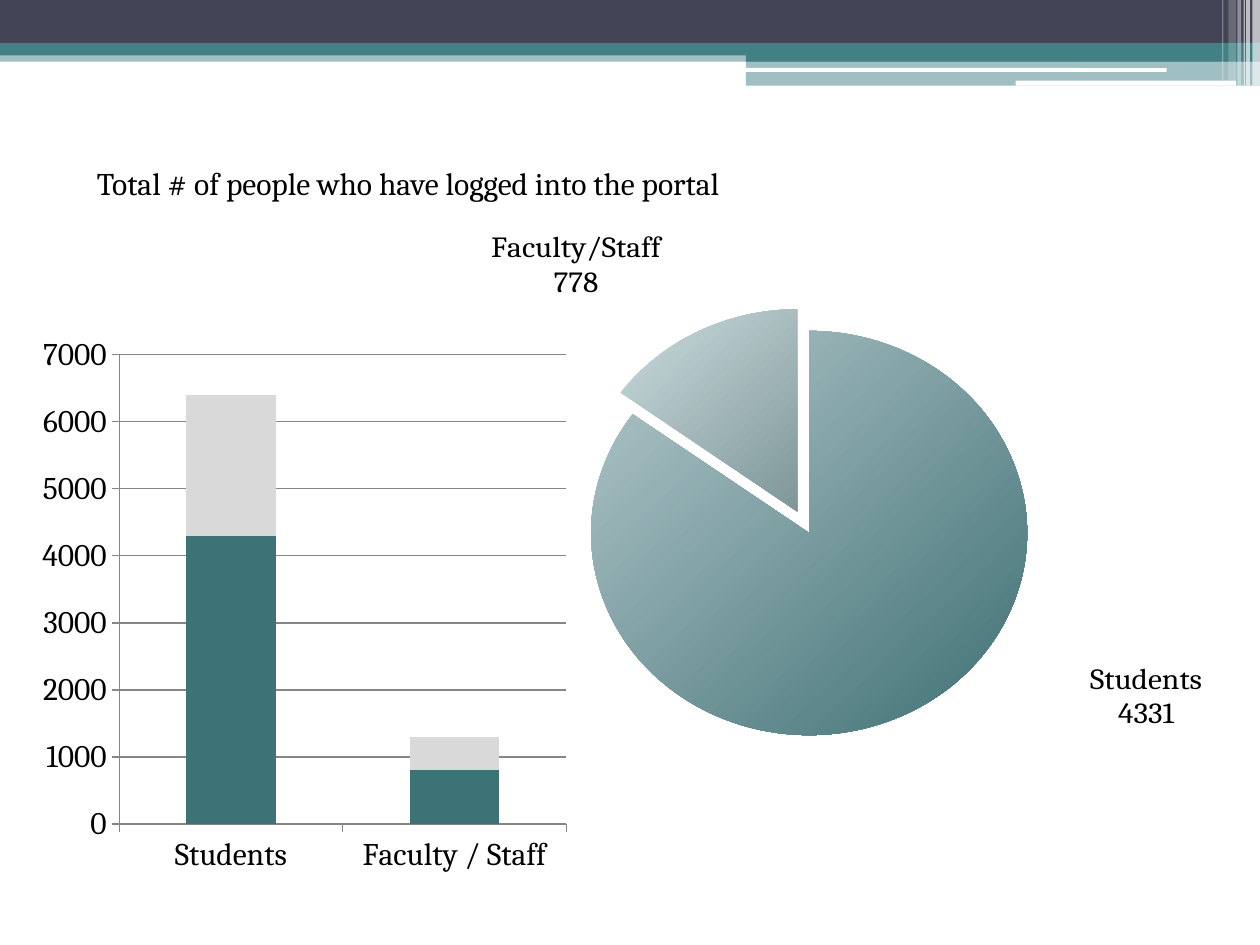
import pptx
import pptx.util
import pptx.chart.data
import pptx.dml.color
import pptx.enum.chart
import pptx.enum.shapes
import pptx.enum.text
import pptx.oxml
import pptx.oxml.ns

Inches, Pt = pptx.util.Inches, pptx.util.Pt
CHART = pptx.enum.chart
SHAPE = pptx.enum.shapes.MSO_SHAPE
NS = pptx.oxml.ns.nsdecls("c")
COLORS = {
    "text": "000000", "white": "FFFFFF", "navy": "424456", "teal": "438086",
    "bar": "3B7377", "rest": "D9D9D9", "axis": "868686",
    "student_light": "B4C8CB", "student_dark": "3F7074",
    "staff_light": "CBDBDE", "staff_dark": "7F9799",
}


def rgb(name):
    return pptx.dml.color.RGBColor.from_string(COLORS[name])


def layout_xml(target="", **values):
    """Manual chart layout; values are fractions of the chart area."""
    body = "".join(f'<c:{key} val="{val}"/>' for key, val in values.items())
    return pptx.oxml.parse_xml(
        f"<c:layout {NS}><c:manualLayout>{target}{body}</c:manualLayout></c:layout>")


class Deck:
    font = "Cambria"
    size = Pt(18)

    def __init__(self, width, height):
        self.prs = pptx.Presentation()
        self.prs.slide_width, self.prs.slide_height = Inches(width), Inches(height)
        self.slide = self.prs.slides.add_slide(self.prs.slide_layouts[6])

    def style(self, font):
        font.name, font.size = self.font, self.size
        font.color.rgb = rgb("text")

    def band(self, x, y, w, h, color, alpha=100, shape=SHAPE.RECTANGLE):
        sp = self.slide.shapes.add_shape(shape, Inches(x), Inches(y), Inches(w), Inches(h))
        sp.shadow.inherit = False
        sp.line.fill.background()
        sp.fill.solid()
        sp.fill.fore_color.rgb = rgb(color)
        if alpha < 100:
            clr = sp.element.xpath("./p:spPr/a:solidFill/a:srgbClr")[0]
            clr.append(pptx.oxml.parse_xml(
                f'<a:alpha {pptx.oxml.ns.nsdecls("a")} val="{alpha * 1000}"/>'))
        return sp

    def text(self, x, y, w, h, wording):
        tf = self.slide.shapes.add_textbox(Inches(x), Inches(y), Inches(w), Inches(h)).text_frame
        tf.word_wrap = True
        tf.auto_size = pptx.enum.text.MSO_AUTO_SIZE.SHAPE_TO_FIT_TEXT
        r = tf.paragraphs[0].add_run()
        r.text = wording
        self.style(r.font)

    def chart(self, kind, x, y, w, h, cats, series):
        data = pptx.chart.data.CategoryChartData()
        data.categories = cats
        for name, vals in series:
            data.add_series(name, vals)
        chart = self.slide.shapes.add_chart(
            kind, Inches(x), Inches(y), Inches(w), Inches(h), data).chart
        self.style(chart.font)
        chart.has_title = chart.has_legend = False
        return chart

    def columns(self, x, y, w, h, cats, series, colors):
        chart = self.chart(CHART.XL_CHART_TYPE.COLUMN_STACKED, x, y, w, h, cats, series)
        plot = chart.plots[0]
        plot.vary_by_categories = False
        plot.overlap, plot.gap_width = 100, 150
        for ser, color in zip(plot.series, colors):
            ser.format.fill.solid()
            ser.format.fill.fore_color.rgb = rgb(color)
        value = chart.value_axis
        value.minimum_scale, value.maximum_scale, value.major_unit = 0, 7000, 1000
        value.has_major_gridlines = True
        chart.category_axis.major_tick_mark = CHART.XL_TICK_MARK.OUTSIDE
        value.major_tick_mark = CHART.XL_TICK_MARK.OUTSIDE
        for part in (value, chart.category_axis, value.major_gridlines):
            part.format.line.color.rgb = rgb("axis")
            part.format.line.width = Pt(0.75)

    def pie(self, x, y, w, h, cats, series, slices, explosion):
        chart = self.chart(CHART.XL_CHART_TYPE.PIE, x, y, w, h, cats, series)
        ser = chart.plots[0].series[0]
        for i, (colors, lines, _) in enumerate(slices):
            # Gradient from upper left to lower right
            fill = ser.points[i].format.fill
            fill.gradient()
            fill.gradient_angle = 315
            for stop, color in zip(fill.gradient_stops, colors):
                stop.color.rgb = rgb(color)
            # Two-line label
            label = ser.points[i].data_label
            tf = label.text_frame
            for n, line in enumerate(lines):
                p = tf.paragraphs[0] if n == 0 else tf.add_paragraph()
                r = p.add_run()
                r.text = line
                self.style(r.font)
            label.position = CHART.XL_LABEL_POSITION.OUTSIDE_END
        # Label offsets without leader lines, slice gap and plot area
        root = chart.element
        for idx, (_, _, (dx, dy)) in zip(root.xpath(".//c:dLbl/c:idx"), slices):
            idx.addnext(layout_xml(x=dx, y=dy))
        for leader in root.xpath(".//c:showLeaderLines"):
            leader.set("val", "0")
        root.xpath(".//c:dPt")[0].addprevious(
            pptx.oxml.parse_xml(f'<c:explosion {NS} val="{explosion}"/>'))
        area = root.xpath(".//c:plotArea")[0]
        for old in area.xpath("./c:layout"):
            area.remove(old)
        area.insert(0, layout_xml(
            '<c:layoutTarget val="inner"/><c:xMode val="edge"/><c:yMode val="edge"/>',
            x=0, y=0.15, w=1, h=0.83))


def main():
    deck = Deck(10, 7.5)

    # Header bands
    deck.band(0, 0.4, 10, 0.09, "teal", 50)
    deck.band(0, 0, 10, 0.34, "navy")
    deck.band(0, 0.34, 10, 0.1, "teal")
    deck.band(5.92, 0.39, 4.08, 0.1, "teal")
    deck.band(5.92, 0.48, 4.08, 0.2, "teal", 50)
    for x, y, w, h in ((5.91, 0.54, 3.35, 0.03), (8.06, 0.64, 1.75, 0.04)):
        deck.band(x, y, w, h, "white", shape=SHAPE.ROUNDED_RECTANGLE)

    # Translucent stripes at the right edge
    for x, w, h, alpha in ((9.94, 0.06, 0.68, 65), (9.89, 0.03, 0.68, 65),
                           (9.87, 0.01, 0.68, 60), (9.82, 0.03, 0.68, 40),
                           (9.75, 0.06, 0.64, 20), (9.7, 0.01, 0.64, 30)):
        deck.band(x, 0, w, h, "white", alpha)

    # Charts
    deck.columns(0.25, 2.58, 4.33, 4.44, ["Students", "Faculty / Staff"],
                 [("Series 1", (4300, 800)), ("Series 2", (2100, 500))], ["bar", "rest"])
    deck.pie(3, 1.83, 6.75, 4.42, ["Students", "Faculty/Staff"], [("Series 1", (85, 15))],
             [(("student_light", "student_dark"), ("Students", "4331"), (0.21, -0.11)),
              (("staff_light", "staff_dark"), ("Faculty/Staff", "778"), (-0.04, -0.05))],
             explosion=6)

    # Heading
    deck.text(0.67, 1.25, 7.42, 0.4, "Total # of people who have logged into the portal")

    deck.prs.save("out.pptx")


if __name__ == "__main__":
    main()
